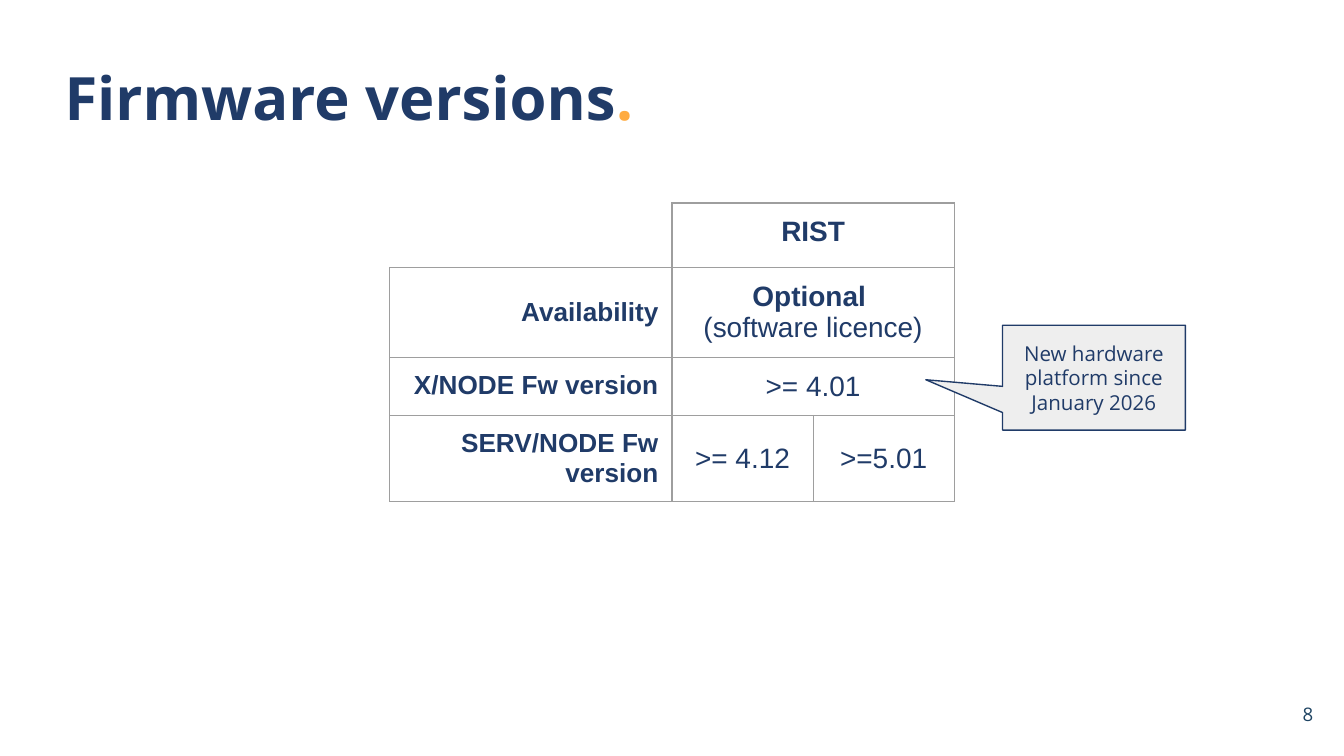
from lxml import etree
from pptx import Presentation
from pptx import util as u
from pptx.dml.color import RGBColor
from pptx.enum import shapes, text
from pptx.oxml.ns import qn

# Content: each cell is a list of lines, each line is (wording, bold)
TITLE = [("Firmware versions", "203B68"), (".", "FFAB40")]
ROWS = [
    [[], [("RIST", True)]],
    [[("Availability", True)], [("Optional ", True), ("(software licence)", False)]],
    [[("X/NODE Fw version", True)], [(">= 4.01", False)]],
    [[("SERV/NODE Fw version", True)], [(">= 4.12", False)], [(">=5.01", False)]],
]
NOTE = "New hardware platform since January 2026"
PAGE_NUMBER = "8"

NAVY, GRID, WHITE = "203B68", "9E9E9E", "FFFFFF"
COLUMN_WIDTHS = [2.1, 1.05, 1.05]
ROW_HEIGHTS = [0.48, 0.67, 0.43, 0.63]
LEFT, CENTER, RIGHT = text.PP_ALIGN.LEFT, text.PP_ALIGN.CENTER, text.PP_ALIGN.RIGHT
TOP, MIDDLE = text.MSO_ANCHOR.TOP, text.MSO_ANCHOR.MIDDLE


def color(value):
    return RGBColor.from_string(value)


def inches(*values):
    return [u.Inches(value) for value in values]


def add_text(para, wording, size=15, font="Open Sans", fill=NAVY, bold=False):
    span = para.add_run()
    span.text = wording
    span.font.size, span.font.name, span.font.bold = u.Pt(size), font, bold
    span.font.color.rgb = color(fill)


def set_frame(frame, align, anchor):
    frame.word_wrap = True
    frame.auto_size = text.MSO_AUTO_SIZE.NONE
    frame.vertical_anchor = anchor
    frame.margin_left = frame.margin_right = u.Inches(0.1)
    frame.margin_top = frame.margin_bottom = u.Inches(0.1)
    para = frame.paragraphs[0]
    para.alignment = align
    return para


def set_borders(cell, colors):
    properties = cell._tc.get_or_add_tcPr()
    for index, (side, value) in enumerate(zip("LRTB", colors)):
        line = etree.Element(qn(f"a:ln{side}"), w=str(u.Pt(0.75)))
        fill = etree.SubElement(line, qn("a:solidFill"))
        etree.SubElement(fill, qn("a:srgbClr"), val=value)
        properties.insert(index, line)


# Wide 16:9 page
deck = Presentation()
deck.slide_width = u.Inches(10)
deck.slide_height = deck.slide_width * 9 // 16
page = deck.slides.add_slide(deck.slide_layouts[5])

# Title
title = page.shapes.title
title.left, title.top, title.width, title.height = inches(0.38, 0.35, 4.95, 0.67)
para = set_frame(title.text_frame, LEFT, TOP)
for wording, fill in TITLE:
    add_text(para, wording, size=32, fill=fill, bold=True)

# Version table
table = page.shapes.add_table(
    len(ROWS), len(COLUMN_WIDTHS),
    *inches(2.9, 1.51, sum(COLUMN_WIDTHS), sum(ROW_HEIGHTS))).table
table.first_row = table.horz_banding = False
for column, width in zip(table.columns, COLUMN_WIDTHS):
    column.width = u.Inches(width)
for row, height in zip(table.rows, ROW_HEIGHTS):
    row.height = u.Inches(height)

for r, row in enumerate(ROWS):
    for c in range(len(COLUMN_WIDTHS)):
        cell = table.cell(r, c)
        cell.fill.background()
        cell.margin_left = cell.margin_right = u.Inches(0.1)
        cell.margin_top = cell.margin_bottom = u.Inches(0.1)
        corner = r == c == 0
        set_borders(cell, [WHITE, GRID, WHITE, GRID] if corner else [GRID] * 4)
        if c >= len(row) or not row[c]:
            # Small type keeps an empty cell from stretching its row
            para = cell.text_frame.paragraphs[0]
            etree.SubElement(para._p, qn("a:endParaRPr"), sz="1400")
    if len(row) == 2:
        table.cell(r, 1).merge(table.cell(r, 2))
    for c, lines in enumerate(row):
        cell = table.cell(r, c)
        centered = (r == 1 and c == 0) or (r == 3 and c > 0)
        cell.vertical_anchor = MIDDLE if centered else TOP
        if not lines:
            continue
        para = cell.text_frame.paragraphs[0]
        para.alignment = CENTER if c else RIGHT
        for index, (wording, bold) in enumerate(lines):
            if index:
                para.add_line_break()
            add_text(para, wording, size=15 if c else 14, font="Arial", bold=bold)

# Callout on the firmware version
callout = page.shapes.add_shape(
    shapes.MSO_SHAPE.RECTANGULAR_CALLOUT, *inches(7.46, 2.42, 1.36, 0.78))
callout.adjustments[0], callout.adjustments[1] = -0.92, 0.02
callout.shadow.inherit = False
callout.fill.solid()
callout.fill.fore_color.rgb = color("EEEEEE")
callout.line.color.rgb = color(NAVY)
callout.line.width = u.Pt(0.75)
add_text(set_frame(callout.text_frame, CENTER, MIDDLE), NOTE, size=11)

# Page number
number = page.shapes.add_textbox(*inches(9.27, 5.1, 0.6, 0.43))
add_text(set_frame(number.text_frame, RIGHT, MIDDLE), PAGE_NUMBER, size=10, fill="1E4463")

deck.save("out.pptx")
